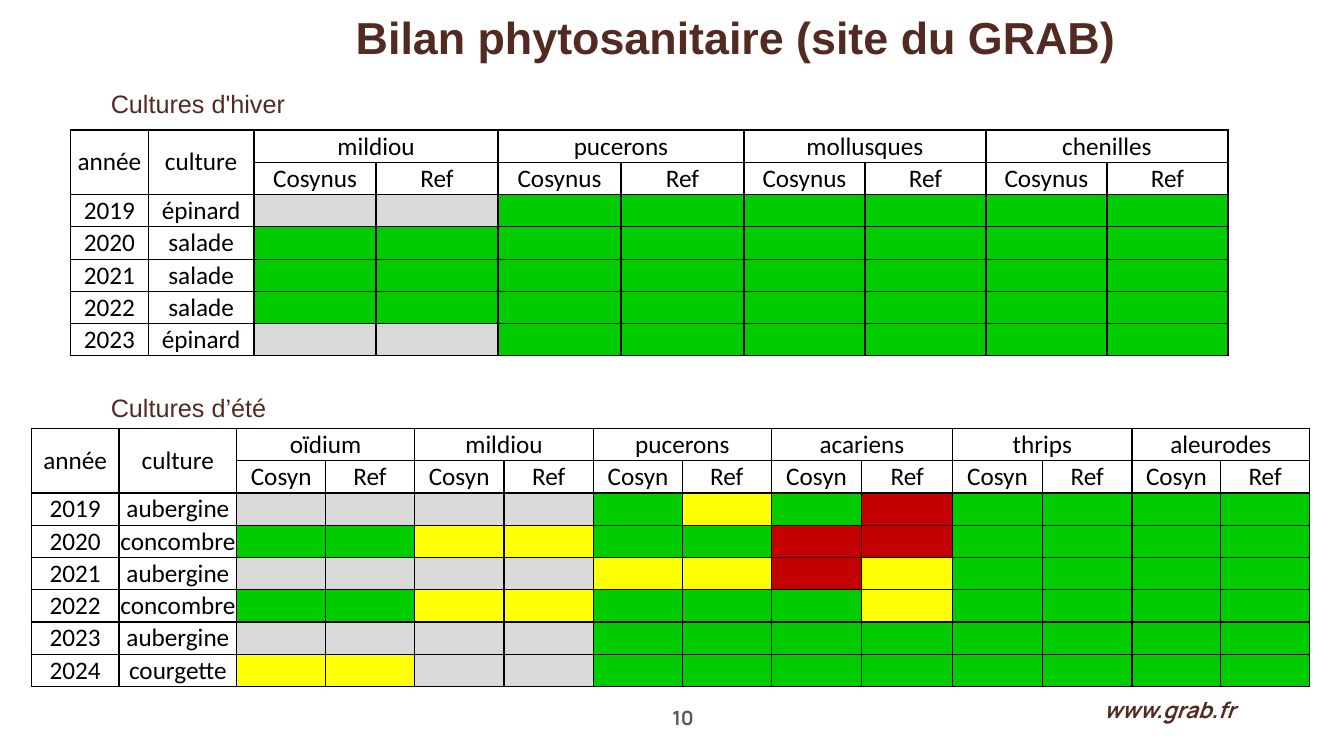
from lxml import etree
from pptx import Presentation
from pptx.dml.color import RGBColor
from pptx.enum.text import MSO_ANCHOR, PP_ALIGN
from pptx.oxml.ns import qn
from pptx.util import Inches, Pt

MIDDLE, TOP = MSO_ANCHOR.MIDDLE, MSO_ANCHOR.TOP
LEFT, CENTER, RIGHT = PP_ALIGN.LEFT, PP_ALIGN.CENTER, PP_ALIGN.RIGHT

BROWN = RGBColor(0x53, 0x2A, 0x21)
DARK_GREY = RGBColor(0x59, 0x59, 0x59)
BLACK = RGBColor(0x00, 0x00, 0x00)
WHITE = RGBColor(0xFF, 0xFF, 0xFF)
GREY = RGBColor(0xD9, 0xD9, 0xD9)
GREEN = RGBColor(0x00, 0xCC, 0x00)
YELLOW = RGBColor(0xFF, 0xFF, 0x05)
RED = RGBColor(0xC4, 0x00, 0x00)

# One letter per cell: n = not concerned, g = good, y = moderate, r = severe
RATING_COLOURS = {"n": GREY, "g": GREEN, "y": YELLOW, "r": RED}

WINTER_PESTS = ["mildiou", "pucerons", "mollusques", "chenilles"]
WINTER_WIDTHS = [0.77, 1.05] + [1.21] * 2 + [1.22] * 2 + [1.2] * 4
WINTER_RATINGS = [
    ("2019", "épinard", "nngggggg"),
    ("2020", "salade", "gggggggg"),
    ("2021", "salade", "gggggggg"),
    ("2022", "salade", "gggggggg"),
    ("2023", "épinard", "nngggggg"),
]

SUMMER_PESTS = ["oïdium", "mildiou", "pucerons", "acariens", "thrips", "aleurodes"]
SUMMER_WIDTHS = ([0.87, 1.17] + [0.88] * 2 + [0.89] * 2 + [0.88] * 2
                 + [0.9] * 2 + [0.89] * 2 + [0.88] * 2)
SUMMER_RATINGS = [
    ("2019", "aubergine", "nnnngygrgggg"),
    ("2020", "concombre", "ggyyggrrgggg"),
    ("2021", "aubergine", "nnnnyyrygggg"),
    ("2022", "concombre", "ggyygggygggg"),
    ("2023", "aubergine", "nnnngggggggg"),
    ("2024", "courgette", "yynngggggggg"),
]


class HealthReport:
    row_height = 0.32
    cell_margin = Inches(0.01)
    cell_font = "Calibri"
    cell_size = 18

    def __init__(self, slide):
        self.slide = slide

    def style(self, paragraph, font, size, colour, align, bold=False, italic=False):
        paragraph.alignment = align
        for run in paragraph.runs:
            run.font.name = font
            run.font.size = Pt(size)
            run.font.color.rgb = colour
            run.font.bold = bold
            run.font.italic = italic

    def text(self, words, left, top, width, height, font, size, colour=BROWN,
             align=LEFT, anchor=TOP, spacing=1.0, **emphasis):
        box = self.slide.shapes.add_textbox(
            Inches(left), Inches(top), Inches(width), Inches(height))
        frame = box.text_frame
        frame.text = words
        frame.word_wrap = True
        frame.vertical_anchor = anchor
        frame.paragraphs[0].line_spacing = spacing
        self.style(frame.paragraphs[0], font, size, colour, align, **emphasis)

    def border(self, cell):
        properties = cell._tc.get_or_add_tcPr()
        for side in ("a:lnL", "a:lnR", "a:lnT", "a:lnB"):
            line = etree.SubElement(properties, qn(side), w=str(Pt(1)))
            fill = etree.SubElement(line, qn("a:solidFill"))
            etree.SubElement(fill, qn("a:srgbClr"), val=str(BLACK))

    def cell(self, cell, words="", colour=WHITE):
        cell.fill.solid()
        cell.fill.fore_color.rgb = colour
        if words:
            cell.text_frame.text = words
            self.style(cell.text_frame.paragraphs[0], self.cell_font,
                       self.cell_size, BLACK, CENTER)

    def ratings(self, left, top, widths, pests, systems, records):
        """Table with two columns per pest, one for each cropping system."""
        row_count = len(records) + 2
        table = self.slide.shapes.add_table(
            row_count, len(widths), Inches(left), Inches(top),
            Inches(sum(widths)), Inches(self.row_height * row_count)).table
        table.first_row = table.horz_banding = False
        for column, width in zip(table.columns, widths):
            column.width = Inches(width)
        for row in table.rows:
            row.height = Inches(self.row_height)
        for cell in table.iter_cells():
            cell.margin_left = cell.margin_right = self.cell_margin
            cell.margin_top = cell.margin_bottom = self.cell_margin
            cell.vertical_anchor = MIDDLE
            self.border(cell)

        for column, heading in enumerate(("année", "culture")):
            table.cell(0, column).merge(table.cell(1, column))
            self.cell(table.cell(0, column), heading)
        for index, pest in enumerate(pests):
            first = 2 + 2 * index
            table.cell(0, first).merge(table.cell(0, first + 1))
            self.cell(table.cell(0, first), pest)
            for offset, system in enumerate(systems):
                self.cell(table.cell(1, first + offset), system)
        for row, (year, crop, marks) in enumerate(records, start=2):
            self.cell(table.cell(row, 0), year)
            self.cell(table.cell(row, 1), crop)
            for column, mark in enumerate(marks, start=2):
                self.cell(table.cell(row, column), colour=RATING_COLOURS[mark])


def main():
    deck = Presentation()
    deck.slide_width, deck.slide_height = Inches(13.33), Inches(7.5)
    report = HealthReport(deck.slides.add_slide(deck.slide_layouts[6]))

    report.text("Bilan phytosanitaire (site du GRAB)", 3.43, 0.11, 7.82, 0.63,
                "Arial", 32, spacing=0.9, bold=True)
    for season, top in (("Cultures d'hiver", 0.83), ("Cultures d’été", 3.84)):
        report.text(season, 1, top, 2.02, 0.4, "Arial", 18, anchor=MIDDLE)
    report.ratings(0.7, 1.29, WINTER_WIDTHS, WINTER_PESTS,
                   ("Cosynus", "Ref"), WINTER_RATINGS)
    report.ratings(0.31, 4.25, SUMMER_WIDTHS, SUMMER_PESTS,
                   ("Cosyn", "Ref"), SUMMER_RATINGS)
    report.text("10", 6.35, 6.95, 0.63, 0.33, "Manrope", 14, DARK_GREY,
                RIGHT, MIDDLE, bold=True)
    report.text("www.grab.fr", 10.85, 6.89, 1.87, 0.35, "Manrope", 16,
                spacing=0.9, bold=True, italic=True)

    deck.save("out.pptx")


if __name__ == "__main__":
    main()
